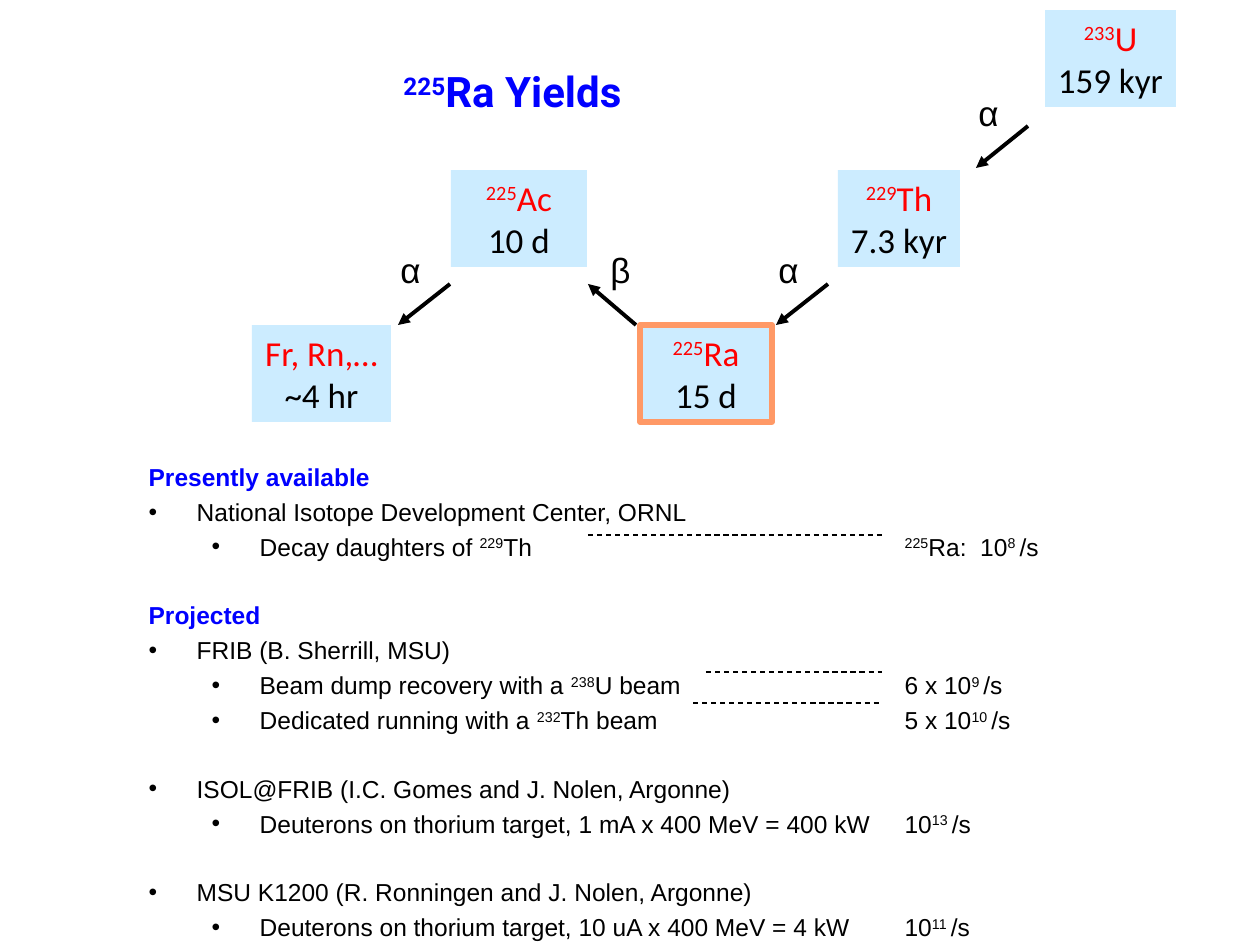
from dataclasses import dataclass

from lxml.etree import SubElement
from pptx import Presentation
from pptx.dml.color import RGBColor
from pptx.enum.dml import MSO_LINE
from pptx.enum.shapes import MSO_CONNECTOR, MSO_SHAPE
from pptx.enum.text import MSO_ANCHOR, MSO_AUTO_SIZE, PP_ALIGN
from pptx.oxml.ns import qn
from pptx.util import Emu, Pt

SCALE = 914400 / 126


@dataclass(frozen=True)
class Theme:
    blue: str = "0000FF"
    red: str = "FF0000"
    black: str = "000000"
    cell: str = "CCECFF"
    highlight: str = "FF9966"
    title_font: str = "Roboto"
    nuclide_font: str = "Calibri"
    body_font: str = "Arial"
    title_size: int = 24
    diagram_size: int = 20
    body_size: int = 14


@dataclass(frozen=True)
class Nuclide:
    label: str
    lifetime: str
    left: int
    top: int
    width: int
    highlighted: bool = False


@dataclass(frozen=True)
class Decay:
    symbol: str
    symbol_left: int
    symbol_top: int
    start: tuple[int, int]
    end: tuple[int, int]


@dataclass(frozen=True)
class Entry:
    text: str
    level: int
    gap: bool = False


THEME = Theme()
NUCLIDE_HEIGHT = 97
LINE_PITCH = 19.15
TAB_STOPS = (165, 756)
INDENTS = (0, 48, 111)
HANGING = 48

NUCLIDES = (
    Nuclide("^233^U", "159 kyr", 1045, 10, 131),
    Nuclide("^229^Th", "7.3 kyr", 838, 170, 122),
    Nuclide("^225^Ra", "15 d", 640, 325, 132, True),
    Nuclide("^225^Ac", "10 d", 451, 170, 136),
    Nuclide("Fr, Rn,…", "~4 hr", 252, 325, 139),
)
DECAYS = (
    Decay("α", 966, 85, (1028, 126), (976, 168)),
    Decay("α", 766, 242, (828, 284), (776, 325)),
    Decay("β", 598, 242, (636, 325), (588, 284)),
    Decay("α", 388, 242, (450, 284), (398, 325)),
)
ENTRIES = (
    Entry("Presently available", 0),
    Entry("National Isotope Development Center, ORNL", 1),
    Entry("Decay daughters of ^229^Th\t^225^Ra:  10^8 ^/s", 2),
    Entry("Projected", 0, True),
    Entry("FRIB (B. Sherrill, MSU)", 1),
    Entry("Beam dump recovery with a ^238^U beam\t6 x 10^9 ^/s", 2),
    Entry("Dedicated running with a ^232^Th beam\t5 x 10^10 ^/s", 2),
    Entry("ISOL@FRIB (I.C. Gomes and J. Nolen, Argonne)", 1, True),
    Entry("Deuterons on thorium target, 1 mA x 400 MeV = 400 kW\t10^13 ^/s", 2),
    Entry("MSU K1200 (R. Ronningen and J. Nolen, Argonne)", 1, True),
    Entry("Deuterons on thorium target, 10 uA x 400 MeV = 4 kW\t10^11 ^/s", 2),
)
LEADERS = (((588, 535), (882, 535)), ((706, 672), (882, 672)), ((693, 703), (882, 703)))


def px(length: int) -> Emu:
    return Emu(round(length * SCALE))


def place(shape, left: int, top: int, width: int, height: int) -> None:
    shape.left, shape.top = px(left), px(top)
    shape.width, shape.height = px(width), px(height)


def add_runs(paragraph, text: str, font: str, size: int, color: str, bold: bool = False) -> None:
    for index, part in enumerate(text.split("^")):
        if not part:
            continue
        run = paragraph.add_run()
        run.text = part
        run.font.name, run.font.size, run.font.bold = font, Pt(size), bold
        run.font.color.rgb = RGBColor.from_string(color)
        if index % 2:
            run.font._element.set("baseline", "30000")


def add_line(slide, start: tuple[int, int], end: tuple[int, int], width: float):
    connector = slide.shapes.add_connector(
        MSO_CONNECTOR.STRAIGHT, *(px(value) for value in start + end))
    connector.line.color.rgb = RGBColor.from_string(THEME.black)
    connector.line.width = Pt(width)
    return connector


def remove_shadow(connector) -> None:
    SubElement(connector._element.spPr, qn("a:effectLst"))


def add_nuclide(slide, nuclide: Nuclide) -> None:
    cell = slide.shapes.add_shape(MSO_SHAPE.RECTANGLE, 0, 0, 0, 0)
    place(cell, nuclide.left, nuclide.top, nuclide.width, NUCLIDE_HEIGHT)
    cell.shadow.inherit = False
    cell.fill.solid()
    cell.fill.fore_color.rgb = RGBColor.from_string(THEME.cell)
    if nuclide.highlighted:
        cell.line.color.rgb = RGBColor.from_string(THEME.highlight)
        cell.line.width = Pt(3)
    else:
        cell.line.fill.background()
    frame = cell.text_frame
    frame.word_wrap = False
    frame.vertical_anchor = MSO_ANCHOR.TOP
    rows = ((nuclide.label, THEME.red), (nuclide.lifetime, THEME.black))
    for index, (text, color) in enumerate(rows):
        paragraph = frame.add_paragraph() if index else frame.paragraphs[0]
        paragraph.alignment = PP_ALIGN.CENTER
        add_runs(paragraph, text, THEME.nuclide_font, THEME.diagram_size, color)


def add_decay(slide, decay: Decay) -> None:
    arrow = add_line(slide, decay.start, decay.end, 2.25)
    SubElement(arrow.line._get_or_add_ln(), qn("a:tailEnd"), type="triangle")
    remove_shadow(arrow)
    symbol = slide.shapes.add_textbox(0, 0, 0, 0)
    place(symbol, decay.symbol_left, decay.symbol_top, 47, 55)
    symbol.text_frame.word_wrap = False
    add_runs(symbol.text_frame.paragraphs[0], decay.symbol,
             THEME.body_font, THEME.diagram_size, THEME.black)


def add_entry(paragraph, entry: Entry) -> None:
    heading = entry.level == 0
    paragraph.level = max(entry.level - 1, 0)
    paragraph.line_spacing = 1.19
    paragraph.space_before = Pt(LINE_PITCH if entry.gap else 0)
    properties = paragraph._p.get_or_add_pPr()
    properties.set("marL", str(px(INDENTS[entry.level])))
    properties.set("indent", str(0 if heading else -px(HANGING)))
    if heading:
        SubElement(properties, qn("a:buNone"))
    else:
        SubElement(properties, qn("a:buFont"), typeface=THEME.body_font)
        SubElement(properties, qn("a:buChar"), char="•")
    tabs = SubElement(properties, qn("a:tabLst"))
    for stop in TAB_STOPS:
        SubElement(tabs, qn("a:tab"), pos=str(px(stop)), algn="l")
    add_runs(paragraph, entry.text, THEME.body_font, THEME.body_size,
             THEME.blue if heading else THEME.black, heading)


def main() -> None:
    deck = Presentation()
    deck.slide_width, deck.slide_height = px(1260), px(945)
    slide = deck.slides.add_slide(deck.slide_layouts[1])

    title = slide.shapes.title
    place(title, 42, 42, 941, 98)
    title.text_frame.vertical_anchor = MSO_ANCHOR.MIDDLE
    heading = title.text_frame.paragraphs[0]
    heading.alignment = PP_ALIGN.CENTER
    add_runs(heading, "^225^Ra Yields", THEME.title_font, THEME.title_size, THEME.blue, True)

    for nuclide in NUCLIDES:
        add_nuclide(slide, nuclide)
    for decay in DECAYS:
        add_decay(slide, decay)

    yields = slide.placeholders[1]
    place(yields, 136, 450, 1018, 486)
    frame = yields.text_frame
    frame.auto_size = MSO_AUTO_SIZE.NONE
    frame.word_wrap = True
    for index, entry in enumerate(ENTRIES):
        add_entry(frame.add_paragraph() if index else frame.paragraphs[0], entry)

    for start, end in LEADERS:
        leader = add_line(slide, start, end, 0.75)
        leader.line.dash_style = MSO_LINE.DASH
        remove_shadow(leader)

    deck.save("out.pptx")


if __name__ == "__main__":
    main()
